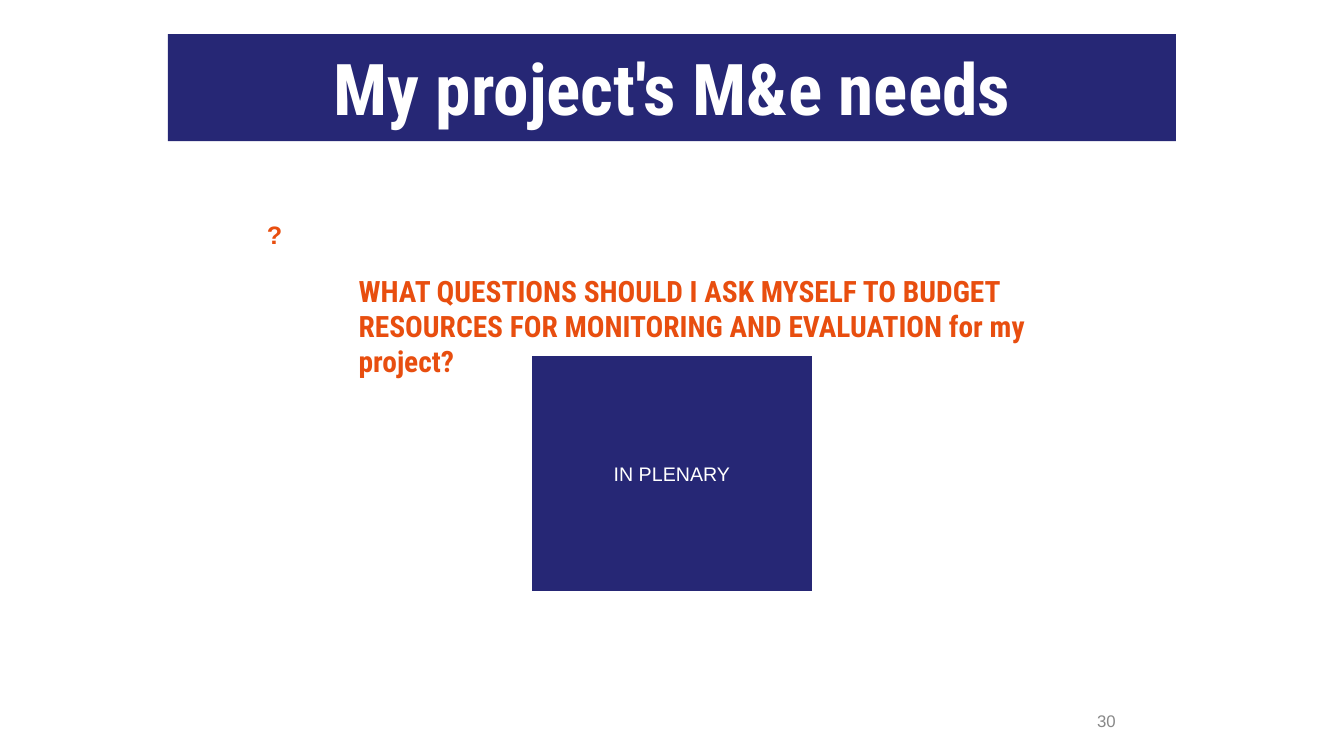
from pptx import Presentation
from pptx.dml.color import RGBColor
from pptx.enum.shapes import MSO_SHAPE as Shape
from pptx.enum.text import MSO_ANCHOR as Anchor, MSO_AUTO_SIZE as AutoSize, PP_ALIGN as Align
from pptx.util import Inches, Pt

NAVY = RGBColor(0x26, 0x27, 0x75)
ORANGE = RGBColor(0xE8, 0x4E, 0x0F)
GREY = RGBColor(0x88, 0x88, 0x88)
WHITE = RGBColor(0xFF, 0xFF, 0xFF)


class PlenaryPage:
    """Style and current slide, laid out on a grid of 80 columns by 45 rows."""

    COLUMNS, ROWS = 80, 45
    HEADING_FONT, BODY_FONT = "Roboto Condensed", "Arial"

    def __init__(self, deck):
        self.column = deck.slide_width / self.COLUMNS
        self.row = deck.slide_height / self.ROWS
        self.page = deck.slides.add_slide(deck.slide_layouts[6])

    def place(self, left, top, width, height):
        return (round(left * self.column), round(top * self.row),
                round(width * self.column), round(height * self.row))

    def set_words(self, box, words, size, color, font=BODY_FONT, bold=False,
                  align=Align.LEFT, anchor=Anchor.TOP, padding=0.05):
        frame = box.text_frame
        frame.word_wrap = True
        frame.vertical_anchor = anchor
        frame.margin_left = frame.margin_right = Inches(0.1)
        frame.margin_top = frame.margin_bottom = Inches(padding)
        para = frame.paragraphs[0]
        para.text = words
        para.alignment = align
        para.font.name = font
        para.font.size = Pt(size)
        para.font.bold = bold
        para.font.color.rgb = color

    def text(self, cell, words, size, color, **style):
        box = self.page.shapes.add_textbox(*self.place(*cell))
        self.set_words(box, words, size, color, **style)

    def panel(self, cell, words, size, border=None, **style):
        box = self.page.shapes.add_shape(Shape.RECTANGLE, *self.place(*cell))
        box.shadow.inherit = False
        box.fill.solid()
        box.fill.fore_color.rgb = NAVY
        if border:
            box.line.color.rgb = WHITE
            box.line.width = Pt(border)
        else:
            box.line.fill.background()
        self.set_words(box, words, size, WHITE, align=Align.CENTER, **style)
        return box


def main():
    deck = Presentation()
    deck.slide_width, deck.slide_height = Inches(13.33), Inches(7.5)
    page = PlenaryPage(deck)

    # Page number
    page.text((53, 41.7, 14, 2.4), "30", 12, GREY,
              align=Align.RIGHT, anchor=Anchor.MIDDLE)

    # Question and its mark
    page.text((20.76, 15.96, 45.12, 3.36),
              "WHAT QUESTIONS SHOULD I ASK MYSELF TO BUDGET RESOURCES FOR "
              "MONITORING AND EVALUATION for my project?",
              21, ORANGE, font=page.HEADING_FONT, bold=True)
    page.text((15.3, 12.78, 5.16, 10.32), "?", 18, ORANGE, bold=True)

    # Title banner
    banner = page.panel((10, 2.04, 60, 6.36), "My project's M&e needs", 51,
                        font=page.HEADING_FONT, bold=True, padding=0.1)
    banner.text_frame.auto_size = AutoSize.SHAPE_TO_FIT_TEXT

    # Plenary panel
    page.panel((31.6, 21.12, 16.8, 14.16), "IN PLENARY", 14,
               border=2, anchor=Anchor.MIDDLE)

    deck.save("out.pptx")


if __name__ == "__main__":
    main()
